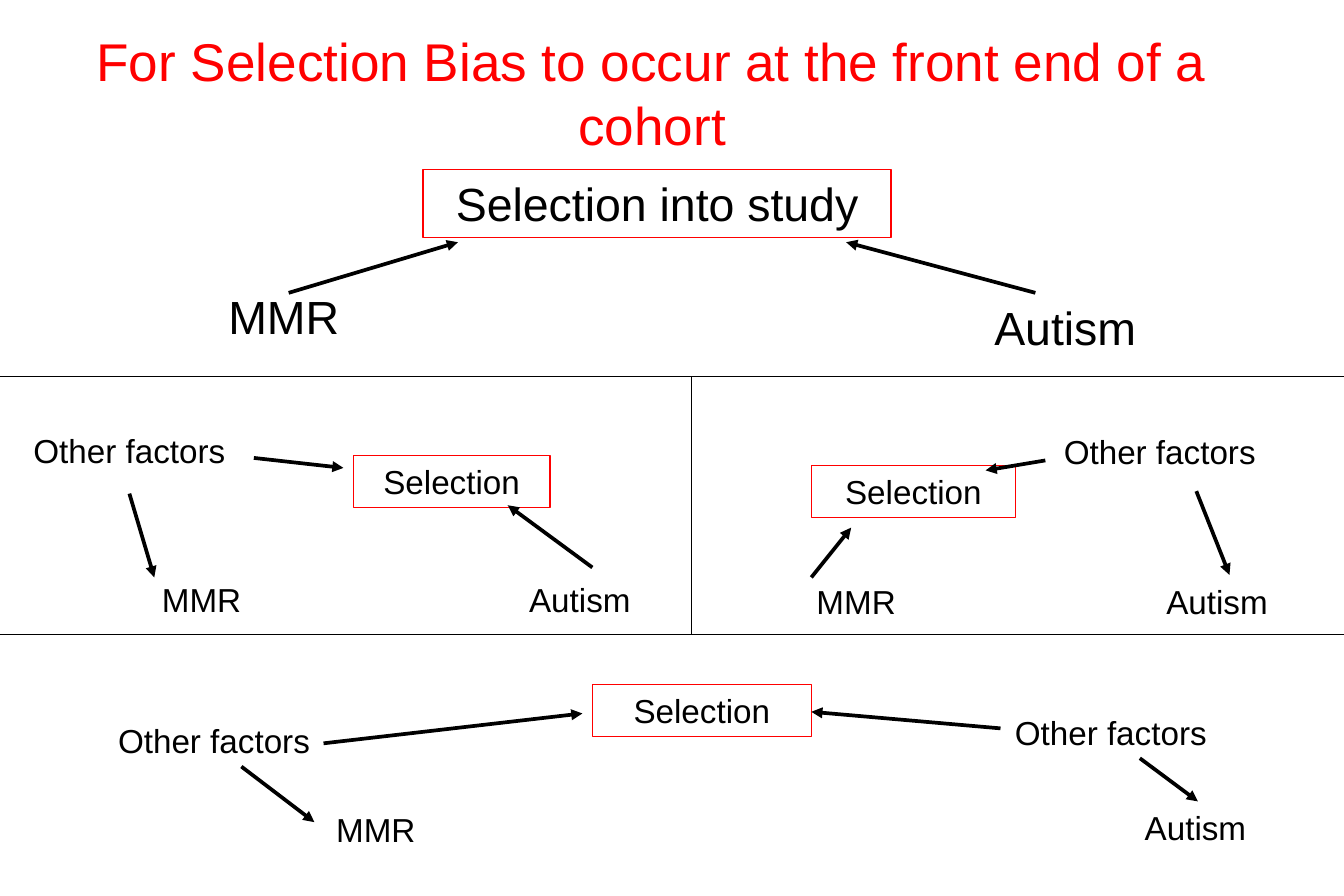
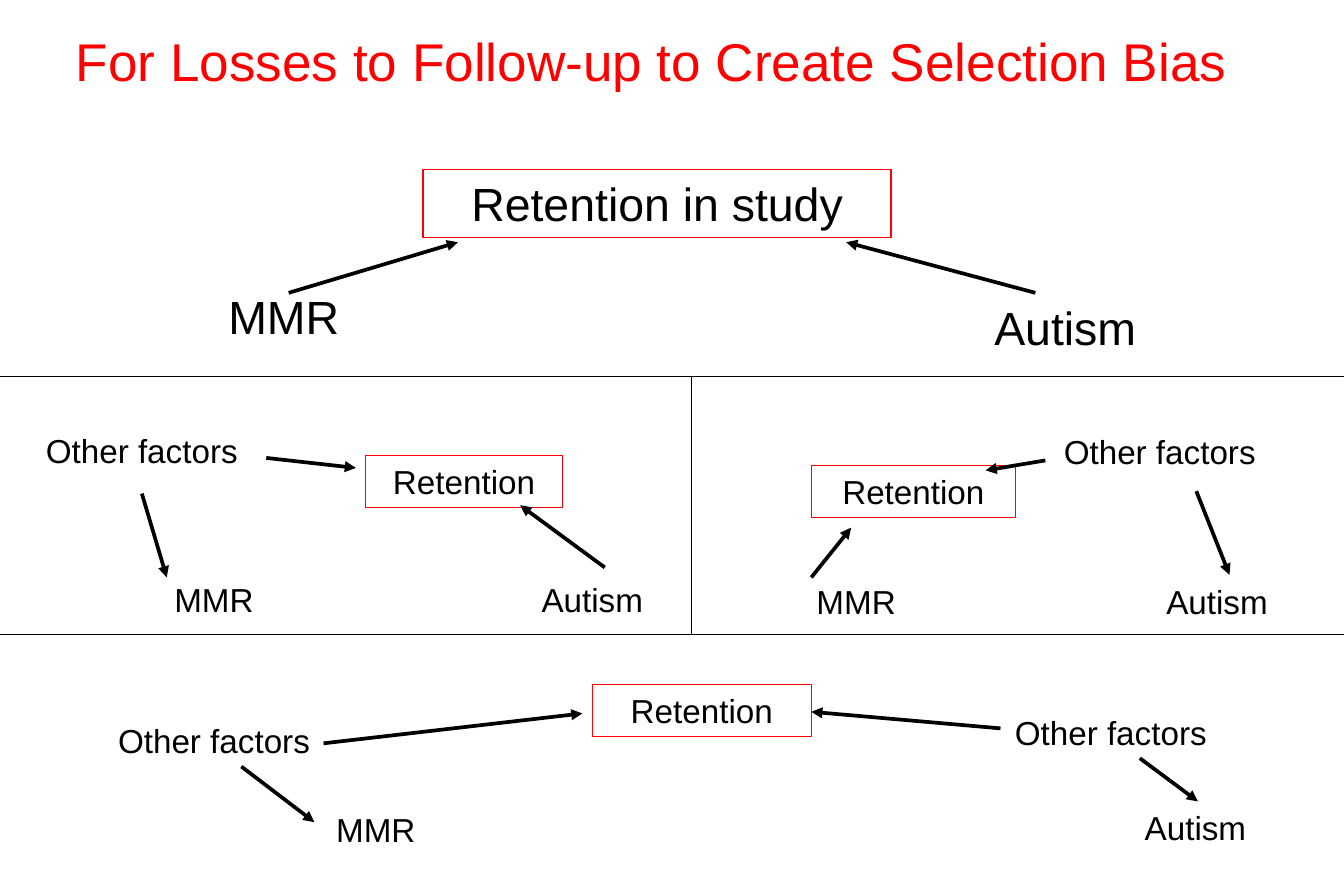
from dataclasses import dataclass
from pptx import Presentation
from pptx.dml.color import RGBColor as Rgb
from pptx.enum.shapes import MSO_CONNECTOR as Conn, MSO_SHAPE as Shape
from pptx.enum.text import MSO_ANCHOR as Anchor, MSO_AUTO_SIZE as Fit, PP_ALIGN as Align
from pptx.oxml.ns import qn
from pptx.util import Pt
from lxml.etree import SubElement as Sub


@dataclass(frozen=True)
class Theme:
    """Colours, font, type sizes and line widths."""
    ink: Rgb = Rgb(0, 0, 0)
    red: Rgb = Rgb(255, 0, 0)
    font: str = "Arial"
    title: int = 32
    large: int = 28
    small: int = 20
    thin: float = 0.75
    thick: float = 2.25


LOOK = Theme()
WIDE, HIGH = 810, 540
MID, ROW, LOW = 417, 227, 382.5
TALL = {LOOK.title: 46, LOOK.large: 41, LOOK.small: 31.5}


class Panel:
    """A group whose members are placed relative to a box."""

    def __init__(self, slide, box):
        """Open the group at the corner of the box."""
        self.left, self.top, self.wide, self.high = box
        self.group = slide.shapes.add_group_shape().shapes

    def area(self, x, y, wide, size):
        """Give the place of one line of text."""
        spot = self.left + x, self.top + y, wide, TALL[size]
        return [Pt(n) for n in spot]

    def label(self, text, x, y, wide, size=LOOK.small):
        """Add plain text."""
        write(self.group.add_textbox(*self.area(x, y, wide, size)), text, size)

    def frame(self, text, x, y, wide, size=LOOK.small):
        """Add text in a red outline."""
        rect = self.group.add_shape(Shape.RECTANGLE, *self.area(x, y, wide, size))
        rect.shadow.inherit = False
        rect.fill.background()
        rect.line.color.rgb = LOOK.red
        rect.line.width = Pt(LOOK.thin)
        write(rect, text, size)

    def rule(self, start, end, width=LOOK.thin):
        """Add a straight line."""
        ends = [Pt(n) for x, y in (start, end) for n in (self.left + x, self.top + y)]
        line = self.group.add_connector(Conn.STRAIGHT, *ends)
        line.line.color.rgb = LOOK.ink
        line.line.width = Pt(width)
        Sub(line.element.spPr, qn("a:effectLst"))
        return line

    def arrow(self, start, end):
        """Add a thick line with a head at its end."""
        line = self.rule(start, end, LOOK.thick)
        Sub(line.element.spPr.find(qn("a:ln")), qn("a:tailEnd"), type="triangle")


def write(shape, text, size, color=LOOK.ink):
    """Set centred text in a shape."""
    body = shape.text_frame
    body.text = text
    body.word_wrap = True
    body.vertical_anchor = Anchor.TOP
    body.auto_size = Fit.SHAPE_TO_FIT_TEXT
    para = body.paragraphs[0]
    para.alignment = Align.CENTER
    font = para.runs[0].font
    font.name, font.size, font.color.rgb = LOOK.font, Pt(size), color


def head(slide, box, text):
    """Place the slide title."""
    write(slide.shapes.add_textbox(*map(Pt, box)), text, LOOK.title, LOOK.red)


def direct(slide, box, text):
    """Draw both causes acting on the outcome."""
    panel = Panel(slide, box)
    panel.arrow((174, 74.5), (276, 44))
    panel.arrow((624, 74.5), (510, 44))
    panel.frame(text, 255, 0, 282, LOOK.large)
    panel.label("MMR", 30, 68, 282, LOOK.large)
    panel.label("Autism", 501, 74.5, 282, LOOK.large)


def first(slide, box, text):
    """Draw other factors behind MMR."""
    panel = Panel(slide, box)
    panel.arrow((78, 70.5), (93, 121))
    panel.frame(text, 213, 47.5, 118.5)
    panel.label("MMR", 27, 118.5, 189)
    panel.label("Autism", 276, 118.5, 147)
    panel.label("Other factors", -6, 28.5, 168)
    panel.arrow((153, 49), (207, 55))
    panel.arrow((357, 115), (306, 77.5))


def second(slide, box, text):
    """Draw other factors behind autism."""
    panel = Panel(slide, box)
    panel.label("Autism", 240, 119.5, 153)
    panel.label("MMR", -6, 119.5, 210)
    panel.arrow((72, 121), (96, 91))
    panel.frame(text, 72, 53.5, 123)
    panel.label("Other factors", 198, 29.5, 168)
    panel.arrow((304, 69), (324, 119.5))
    panel.arrow((213, 50.5), (177, 56.5))


def both(slide, box, text):
    """Draw other factors behind MMR and autism."""
    panel = Panel(slide, box)
    panel.label("Autism", 635, 100.5, 171)
    panel.arrow((195, 65.5), (351, 47.5))
    panel.frame(text, 357, 30, 132)
    panel.arrow((603, 56.5), (489, 46.5))
    panel.label("Other factors", 45, 48, 168)
    panel.label("Other factors", 585.5, 43.5, 168)
    panel.label("MMR", 135, 102, 183)
    panel.arrow((145.5, 79.5), (189.5, 113))
    panel.arrow((687, 74.5), (722, 100.5))


def grid(slide, box):
    """Rule off the middle row and halve it."""
    panel = Panel(slide, box)
    for y in (panel.high, 0):
        panel.rule((0, y), (panel.wide, y))
    panel.rule((MID, 0), (MID, panel.high))


def build(slide, title, main, short, shift):
    """Lay out one slide."""
    row = LOW - ROW
    direct(slide, (0, 102, WIDE, ROW - 102), main)
    first(slide, (shift, ROW, MID, row), short)
    second(slide, (MID, ROW, WIDE - MID, row), short)
    both(slide, (0, LOW, WIDE, HIGH - LOW), short)
    grid(slide, (0, ROW, WIDE, row))
    head(slide, (3, 13.5, 780, TALL[LOOK.title]), title)


def main():
    """Build and save the deck."""
    deck = Presentation()
    deck.slide_width, deck.slide_height = Pt(WIDE), Pt(HIGH)
    pages = (
        ("For Selection Bias to occur at the front end of a cohort",
         "Selection into study", "Selection", 0),
        ("For Losses to Follow-up to Create Selection Bias",
         "Retention in study", "Retention", 7.5),
    )
    for page in pages:
        build(deck.slides.add_slide(deck.slide_layouts[6]), *page)
    deck.save("out.pptx")


if __name__ == "__main__":
    main()
